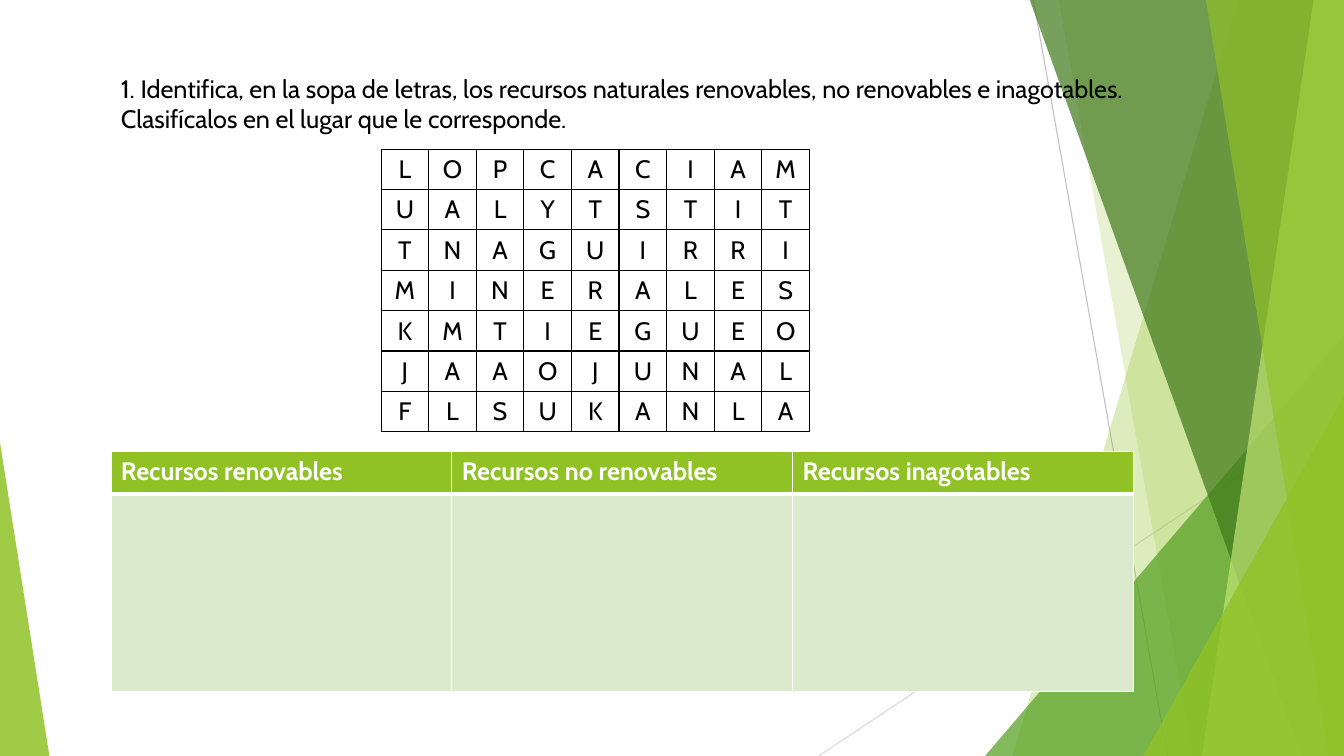
"""Builds a word-search slide with a table for classifying natural resources."""
import lxml.etree
import pptx
import pptx.dml.color
import pptx.enum.shapes
import pptx.enum.text
import pptx.oxml.ns
import pptx.util

W, H = 13.33, 7.5
FONT, SIZE = "Cabin", 18
GREEN, PALE, WHITE, BLACK = "90C226", "DBE9CD", "FFFFFF", "000000"
TASK = ("1. Identifica, en la sopa de letras, los recursos naturales renovables, "
        "no renovables e inagotables. Clasifícalos en el lugar que le corresponde.")
LETTERS = ["LOPCACIAM", "UALYTSTIT", "TNAGUIRRI", "MINERALES",
           "KMTIEGUEO", "JAAOJUNAL", "FLSUKANLA"]
CLASSES = [["Recursos renovables", "Recursos no renovables", "Recursos inagotables"],
           ["", "", ""]]
LINES = [((10.25, 0), (11.58, H), "BFBFBF"), ((W, 4.03), (8.12, H), "D9D9D9")]
# BANDS = top left x, bottom left x, colour, opacity
BANDS_BACK = [(12.28, 10.04, GREEN, 30), (10.5, 11.83, GREEN, 20)]
BANDS_FRONT = [(10.21, 12.91, "3F7819", 70), (13.03, 11.92, "C0E474", 70),
               (11.96, 13.18, GREEN, 65)]
TRIANGLE_BACK = (9.77, 3.33, 3.56, 1, "54A021", 72)
TRIANGLES_FRONT = [(11.34, 3.93, 1.99, 1, GREEN, 80), (0, 4.39, 0.49, 0, GREEN, 85)]


def inch(value):
    """Return a length in inches as whole EMU."""
    return pptx.util.Inches(value)


def rgb(value):
    """Return the colour for a hex string."""
    return pptx.dml.color.RGBColor.from_string(value)


def child(parent, tag, **attrs):
    """Append a drawing element to a parent."""
    return lxml.etree.SubElement(parent, pptx.oxml.ns.qn(tag), attrs)


def paint(s, color, opacity):
    """Give a shape a translucent fill without line or shadow."""
    s.shadow.inherit = False
    s.line.fill.background()
    s.fill.solid()
    s.fill.fore_color.rgb = rgb(color)
    solid = s.fill._xPr.find(pptx.oxml.ns.qn("a:solidFill"))
    child(solid[0], "a:alpha", val=str(opacity * 1000))


def add_line(shapes, start, end, color):
    """Draw a thin straight line."""
    s = shapes.add_connector(pptx.enum.shapes.MSO_CONNECTOR.STRAIGHT,
                             *map(inch, start + end))
    s.line.color.rgb = rgb(color)
    s.line.width = pptx.util.Pt(0.75)
    child(s._element.spPr, "a:effectLst")


def add_band(shapes, top, bottom, color, opacity):
    """Draw a slanted band that reaches the right edge of the slide."""
    points = [(inch(x), inch(y)) for x, y in
              [(top, -0.01), (W, -0.01), (W, H), (bottom, H)]]
    builder = shapes.build_freeform(*points[0])
    builder.add_line_segments(points[1:], close=True)
    paint(builder.convert_to_shape(), color, opacity)


def add_triangle(shapes, left, top, width, apex, color, opacity):
    """Draw a triangle standing on the bottom edge."""
    s = shapes.add_shape(pptx.enum.shapes.MSO_SHAPE.ISOSCELES_TRIANGLE,
                         *map(inch, (left, top, width, H - top)))
    s.adjustments[0] = apex
    paint(s, color, opacity)


def style_text(p, color, bold=False, align=pptx.enum.text.PP_ALIGN.LEFT):
    """Set the font and alignment of a paragraph."""
    p.alignment = align
    p.font.name, p.font.size, p.font.bold = FONT, pptx.util.Pt(SIZE), bold
    p.font.color.rgb = rgb(color)


def add_border(cell, color, widths):
    """Set the left, right, top and bottom borders of a cell."""
    for side, width in zip("LRTB", widths):
        line = child(cell._tc.get_or_add_tcPr(), "a:ln" + side,
                     w=str(pptx.util.Pt(width)))
        child(child(line, "a:solidFill"), "a:srgbClr", val=color)


def add_grid(shapes, left, top, width, heights, rows):
    """Add a table with equal columns and return its rows of cells."""
    table = shapes.add_table(len(rows), len(rows[0]), *map(
        inch, (left, top, width, sum(heights)))).table
    table.first_row = table.horz_banding = False
    for row, height in zip(table.rows, heights):
        row.height = inch(height)
    for r, texts in enumerate(rows):
        for c, text in enumerate(texts):
            table.cell(r, c).text = text
    return [list(row.cells) for row in table.rows]


def main():
    """Build and save the slide."""
    prs = pptx.Presentation()
    prs.slide_width, prs.slide_height = inch(W), inch(H)
    shapes = prs.slides.add_slide(prs.slide_layouts[6]).shapes

    for line in LINES:
        add_line(shapes, *line)
    for band in BANDS_BACK:
        add_band(shapes, *band)
    add_triangle(shapes, *TRIANGLE_BACK)
    for band in BANDS_FRONT:
        add_band(shapes, *band)
    for triangle in TRIANGLES_FRONT:
        add_triangle(shapes, *triangle)

    tf = shapes.add_textbox(*map(inch, (1.1, 0.68, 11.17, 0.71))).text_frame
    tf.word_wrap = True
    tf.text = TASK
    style_text(tf.paragraphs[0], BLACK)

    for row in add_grid(shapes, 3.78, 1.48, 4.25, [0.4] * len(LETTERS), LETTERS):
        for cell in row:
            add_border(cell, BLACK, (1, 1, 1, 1))
            cell.fill.background()
            style_text(cell.text_frame.paragraphs[0], BLACK,
                       align=pptx.enum.text.PP_ALIGN.CENTER)

    header, answers = add_grid(shapes, 1.1, 4.48, 10.14, [0.42, 1.96], CLASSES)
    for row, color, widths in [(header, GREEN, (1, 1, 1, 3)), (answers, PALE, (1, 1, 3, 1))]:
        for cell in row:
            add_border(cell, WHITE, widths)
            cell.fill.solid()
            cell.fill.fore_color.rgb = rgb(color)
            style_text(cell.text_frame.paragraphs[0], WHITE, bold=row is header)

    prs.save("out.pptx")


if __name__ == "__main__":
    main()
